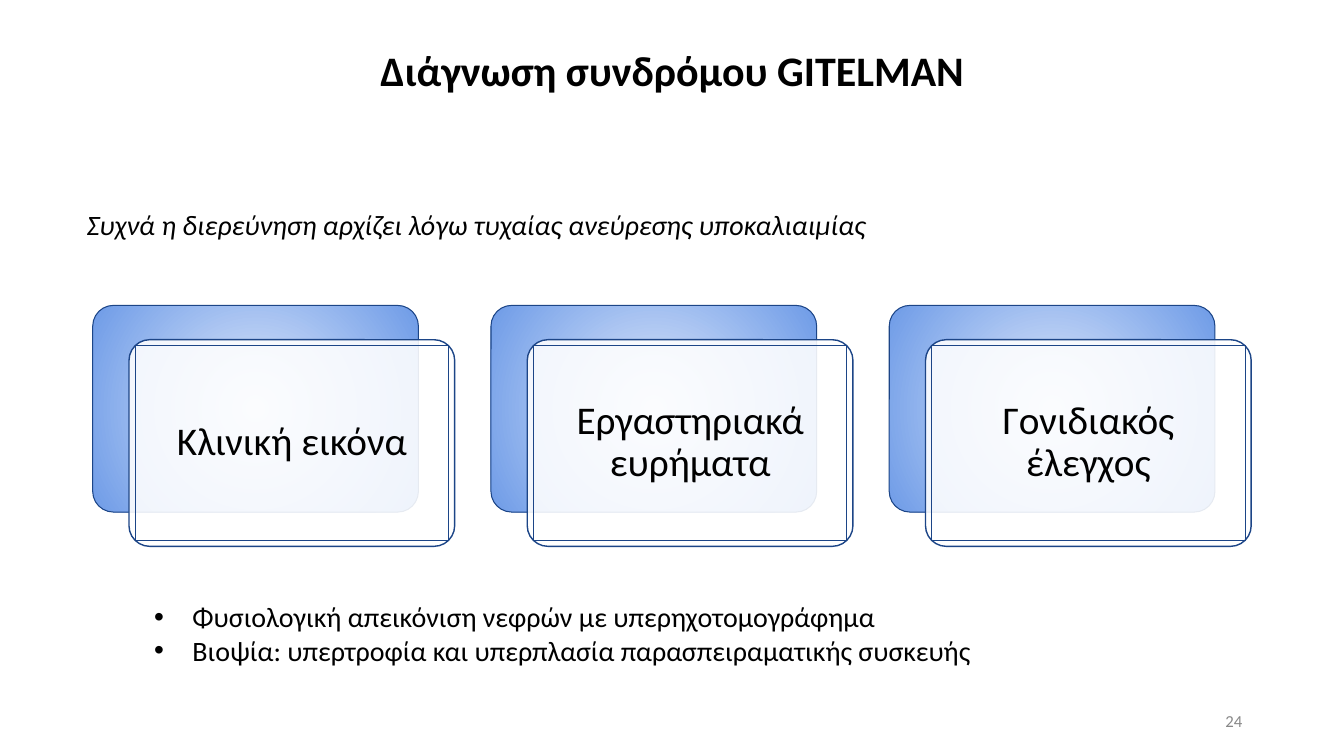
import lxml.etree
import pptx
import pptx.dml.color
import pptx.enum.shapes
import pptx.enum.text
import pptx.oxml.ns
import pptx.util

TITLE = "Διάγνωση συνδρόμου GITELMAN"
INTRO = "Συχνά η διερεύνηση αρχίζει λόγω τυχαίας ανεύρεσης υποκαλιαιμίας"
STEPS = ["Κλινική εικόνα", "Εργαστηριακά ευρήματα", "Γονιδιακός έλεγχος"]
FINDINGS = [
    "Φυσιολογική απεικόνιση νεφρών με υπερηχοτομογράφημα",
    "Βιοψία: υπερτροφία και υπερπλασία παρασπειραματικής συσκευής",
]
PAGE = "24"

WIDTH, HEIGHT = 13.33, 7.5
CARD_LEFT, CARD_TOP, CARD_PITCH = 0.92, 3.03, 3.95
CARD_WIDTH, CARD_HEIGHT = 3.23, 2.05
FRONT_DX, FRONT_DY, LABEL_GAP = 0.36, 0.34, 0.06
BLACK, GREY, WHITE, NAVY = "000000", "888888", "FFFFFF", "1C4587"
GLOW = ["DFE9FB", "6E9BE7"]

PRESETS = pptx.enum.shapes.MSO_SHAPE
ALIGN = pptx.enum.text.PP_ALIGN
ANCHOR = pptx.enum.text.MSO_ANCHOR
qn = pptx.oxml.ns.qn


def rgb(value):
    """Turn a hex string into a colour."""
    return pptx.dml.color.RGBColor.from_string(value)


def add_xml(parent, tag, **attributes):
    """Append a drawing element to a parent."""
    return lxml.etree.SubElement(parent, qn(tag), attributes)


def inches(*lengths):
    """Convert lengths in inches."""
    return [pptx.util.Inches(length) for length in lengths]


def write(holder, lines, size=20, color=BLACK, bold=False, italic=False, align=ALIGN.LEFT,
          anchor=ANCHOR.TOP, spacing=None, bullet=None, margins=(0.1, 0.05)):
    """Fill a shape or text box with formatted paragraphs."""
    frame = holder.text_frame
    frame.word_wrap = True
    frame.vertical_anchor = anchor
    frame.margin_left, frame.margin_top = inches(*margins)
    frame.margin_right, frame.margin_bottom = inches(*margins)
    for index, line in enumerate(lines):
        paragraph = frame.add_paragraph() if index else frame.paragraphs[0]
        paragraph.alignment = align
        paragraph.line_spacing = spacing
        run = paragraph.add_run()
        run.text = line
        font = run.font
        font.name, font.size = "Calibri", pptx.util.Pt(size)
        font.bold, font.italic = bold, italic
        font.color.rgb = rgb(color)
        if bullet:
            properties = paragraph._p.get_or_add_pPr()
            indent = pptx.util.Inches(0.38)
            properties.set("marL", str(indent))
            properties.set("indent", str(-indent))
            add_xml(add_xml(properties, "a:buClr"), "a:srgbClr", val=color)
            add_xml(properties, "a:buFont", typeface="Arial")
            add_xml(properties, "a:buChar", char=bullet)


def add_text(slide, box, lines, **style):
    """Add a text box."""
    write(slide.shapes.add_textbox(*inches(*box)), lines, **style)


def add_panel(slide, preset, box, line_width):
    """Add an outlined panel without shadow."""
    panel = slide.shapes.add_shape(preset, *inches(*box))
    panel.shadow.inherit = False
    panel.line.color.rgb = rgb(NAVY)
    panel.line.width = pptx.util.Pt(line_width)
    if preset == PRESETS.ROUNDED_RECTANGLE:
        panel.adjustments[0] = 0.1
    return panel


def add_glow(panel):
    """Fill a panel with a circular gradient from its centre."""
    panel.fill.gradient()
    for stop, color in zip(panel.fill.gradient_stops, GLOW):
        stop.color.rgb = rgb(color)
    gradient = panel.element.spPr.find(qn("a:gradFill"))
    gradient.remove(gradient.find(qn("a:lin")))
    circle = add_xml(gradient, "a:path", path="circle")
    add_xml(circle, "a:fillToRect", l="50000", t="50000", r="50000", b="50000")


def add_card(slide, left, label):
    """Add a step: back panel, translucent front panel and label."""
    size = CARD_WIDTH, CARD_HEIGHT
    add_glow(add_panel(slide, PRESETS.ROUNDED_RECTANGLE, (left, CARD_TOP, *size), 0.75))

    front_left, front_top = left + FRONT_DX, CARD_TOP + FRONT_DY
    front = add_panel(slide, PRESETS.ROUNDED_RECTANGLE, (front_left, front_top, *size), 1)
    front.fill.solid()
    front.fill.fore_color.rgb = rgb(WHITE)
    tint = front.element.spPr.find(qn("a:solidFill")).find(qn("a:srgbClr"))
    add_xml(tint, "a:alpha", val="89000")

    label_box = (front_left + LABEL_GAP, front_top + LABEL_GAP,
                 CARD_WIDTH - 2 * LABEL_GAP, CARD_HEIGHT - 2 * LABEL_GAP)
    caption = add_panel(slide, PRESETS.RECTANGLE, label_box, 0.75)
    caption.fill.background()
    write(caption, [label], size=28, align=ALIGN.CENTER, anchor=ANCHOR.MIDDLE,
          spacing=0.9, margins=(0.12, 0.12))


def main():
    """Build the slide and save it."""
    deck = pptx.Presentation()
    deck.slide_width, deck.slide_height = inches(WIDTH, HEIGHT)
    slide = deck.slides.add_slide(deck.slide_layouts[6])
    for column, step in enumerate(STEPS):
        add_card(slide, CARD_LEFT + column * CARD_PITCH, step)
    add_text(slide, (1.43, 5.9, 9.92, 0.77), FINDINGS, bullet="•")
    add_text(slide, (0.76, 2.01, 9.49, 0.44), [INTRO], italic=True)
    add_text(slide, (2.42, 0.49, 8.5, 0.47), [TITLE], size=30, bold=True,
             align=ALIGN.CENTER, anchor=ANCHOR.MIDDLE, spacing=0.9)
    add_text(slide, (9.42, 6.95, 3, 0.4), [PAGE], size=12, color=GREY,
             align=ALIGN.RIGHT, anchor=ANCHOR.MIDDLE)
    deck.save("out.pptx")


if __name__ == "__main__":
    main()
